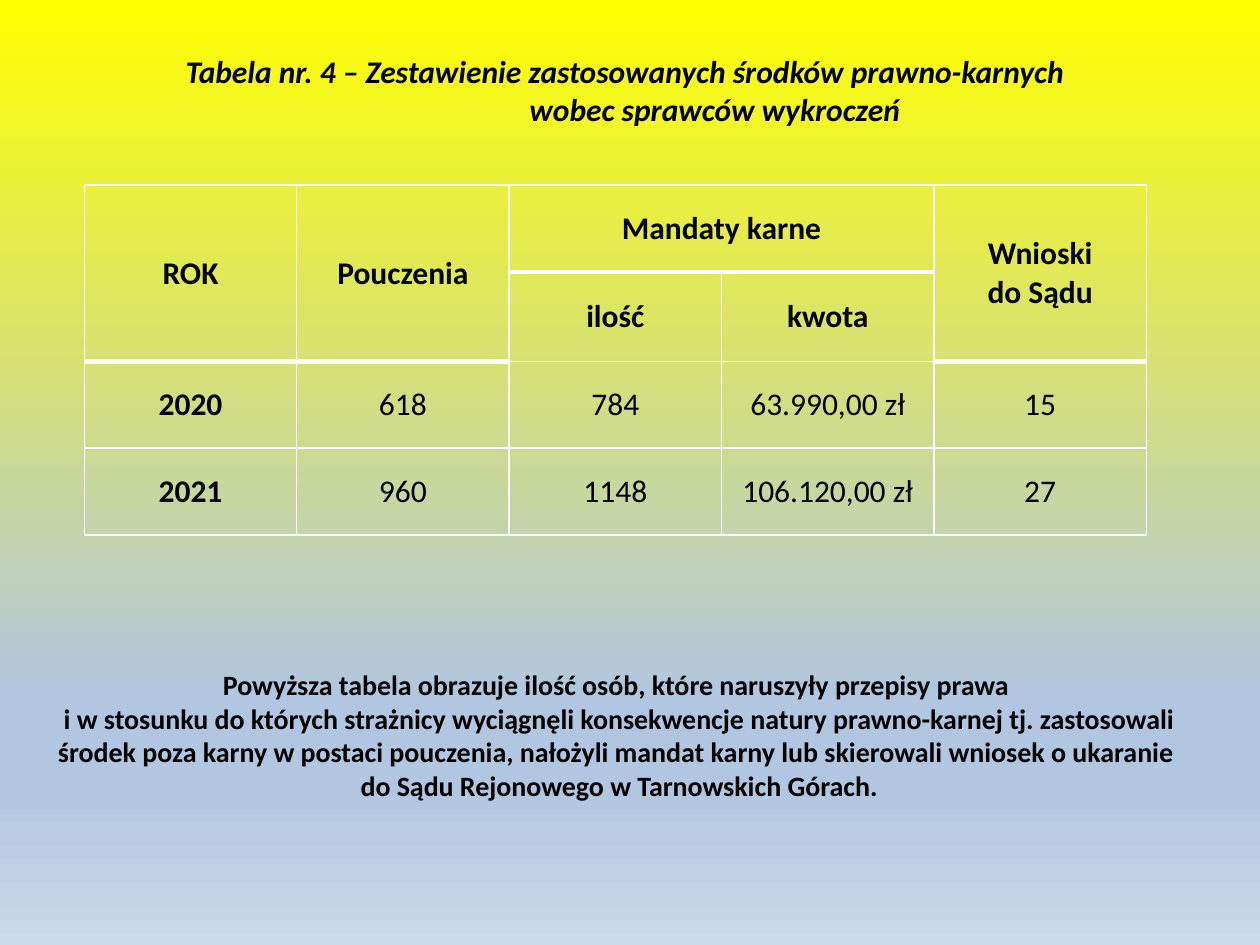
from lxml.etree import SubElement
from pptx import Presentation
from pptx.dml.color import RGBColor
from pptx.enum.text import MSO_ANCHOR, MSO_AUTO_SIZE, PP_ALIGN
from pptx.oxml.ns import qn
from pptx.util import Pt

FONT = "Calibri"
BLACK = "000000"
WHITE = "FFFFFF"
BACKGROUND = [(0, "FFFF00"), (74, "B0C6E1"), (83, "B0C6E1"), (100, "CAD9EB")]
HEADING = (
    "Tabela nr. 4 – Zestawienie zastosowanych środków prawno-karnych \n"
    "wobec sprawców wykroczeń"
)
SUMMARY = (
    "Powyższa tabela obrazuje ilość osób, które naruszyły przepisy prawa \n"
    "i w stosunku do których strażnicy wyciągnęli konsekwencje natury prawno-karnej "
    "tj. zastosowali środek poza karny w postaci pouczenia, nałożyli mandat karny "
    "lub skierowali wniosek o ukaranie \n"
    "do Sądu Rejonowego w Tarnowskich Górach."
)
PENALTIES = [
    ["ROK", "Pouczenia", "Mandaty karne", "", "Wnioski\ndo Sądu"],
    ["", "", "ilość", "kwota", ""],
    ["2020", "618", "784", "63.990,00 zł", "15"],
    ["2021", "960", "1148", "106.120,00 zł", "27"],
]
HEADER_ROWS = 2
MERGES = [((0, 0), (1, 0)), ((0, 1), (1, 1)), ((0, 2), (0, 3)), ((0, 4), (1, 4))]
THICK_TOPS = {(1, 2), (1, 3), (2, 0), (2, 1), (2, 4)}


def rgb(code):
    """Return the colour for a hex string."""
    return RGBColor.from_string(code)


def paint_background(slide):
    """Fill the slide with the vertical gradient."""
    fill = slide.background.fill
    fill.gradient()
    fill.gradient_angle = 270
    stops = slide.element.find(".//" + qn("a:gsLst"))
    for stop in list(stops):
        stops.remove(stop)
    for percent, code in BACKGROUND:
        stop = SubElement(stops, qn("a:gs"), pos=str(percent * 1000))
        SubElement(stop, qn("a:srgbClr"), val=code)


def write(paragraph, text, size, bold=True, italic=False):
    """Write centred lines run by run."""
    paragraph.alignment = PP_ALIGN.CENTER
    for number, line in enumerate(text.split("\n")):
        if number:
            paragraph.add_line_break()
        run = paragraph.add_run()
        run.text = line
        font = run.font
        font.name, font.size = FONT, Pt(size)
        font.bold, font.italic = bold, italic
        font.color.rgb = rgb(BLACK)


def fill_placeholder(placeholder, box, text, size, italic=False, hanging=0):
    """Place a placeholder and give it one unbulleted paragraph."""
    placeholder.left, placeholder.top, placeholder.width, placeholder.height = map(Pt, box)
    frame = placeholder.text_frame
    frame.word_wrap = True
    frame.auto_size = MSO_AUTO_SIZE.NONE
    frame.vertical_anchor = MSO_ANCHOR.TOP
    paragraph = frame.paragraphs[0]
    paragraph.space_before = Pt(0)
    write(paragraph, text, size, italic=italic)
    properties = paragraph._p.get_or_add_pPr()
    properties.set("marL", str(Pt(hanging)))
    properties.set("indent", str(-Pt(hanging)))
    SubElement(properties, qn("a:buNone"))


def draw_borders(cell, widths):
    """Draw the white cell borders, given as side and width."""
    properties = cell._tc.get_or_add_tcPr()
    for side, width in widths.items():
        border = SubElement(properties, qn("a:ln" + side), w=str(Pt(width)))
        SubElement(SubElement(border, qn("a:solidFill")), qn("a:srgbClr"), val=WHITE)


def add_penalty_table(slide):
    """Add the table of penalties with its two-level header."""
    rows, columns = len(PENALTIES), len(PENALTIES[0])
    table = slide.shapes.add_table(
        rows, columns, Pt(48.2), Pt(105.8), Pt(607), Pt(198.4)
    ).table
    table.first_row = table.horz_banding = False
    for start, end in MERGES:
        table.cell(*start).merge(table.cell(*end))
    for row, entries in enumerate(PENALTIES):
        for column, entry in enumerate(entries):
            cell = table.cell(row, column)
            top = 3 if (row, column) in THICK_TOPS else 1
            bottom = 3 if (row + cell.span_height, column) in THICK_TOPS else 1
            draw_borders(cell, {"L": 1, "R": 1, "T": top, "B": bottom})
            cell.fill.background()
            cell.vertical_anchor = MSO_ANCHOR.MIDDLE
            if entry:
                bold = row < HEADER_ROWS or column == 0
                write(cell.text_frame.paragraphs[0], entry, 18, bold)


def main():
    """Build the slide and save it."""
    presentation = Presentation()
    presentation.slide_width, presentation.slide_height = Pt(720), Pt(540)
    slide = presentation.slides.add_slide(presentation.slide_layouts[1])
    paint_background(slide)
    add_penalty_table(slide)
    heading, summary = slide.placeholders
    fill_placeholder(heading, (25.2, 26, 668, 51), HEADING, 18, italic=True, hanging=98.6)
    fill_placeholder(summary, (25.2, 378, 657.4, 85), SUMMARY, 16)
    presentation.save("out.pptx")


if __name__ == "__main__":
    main()
